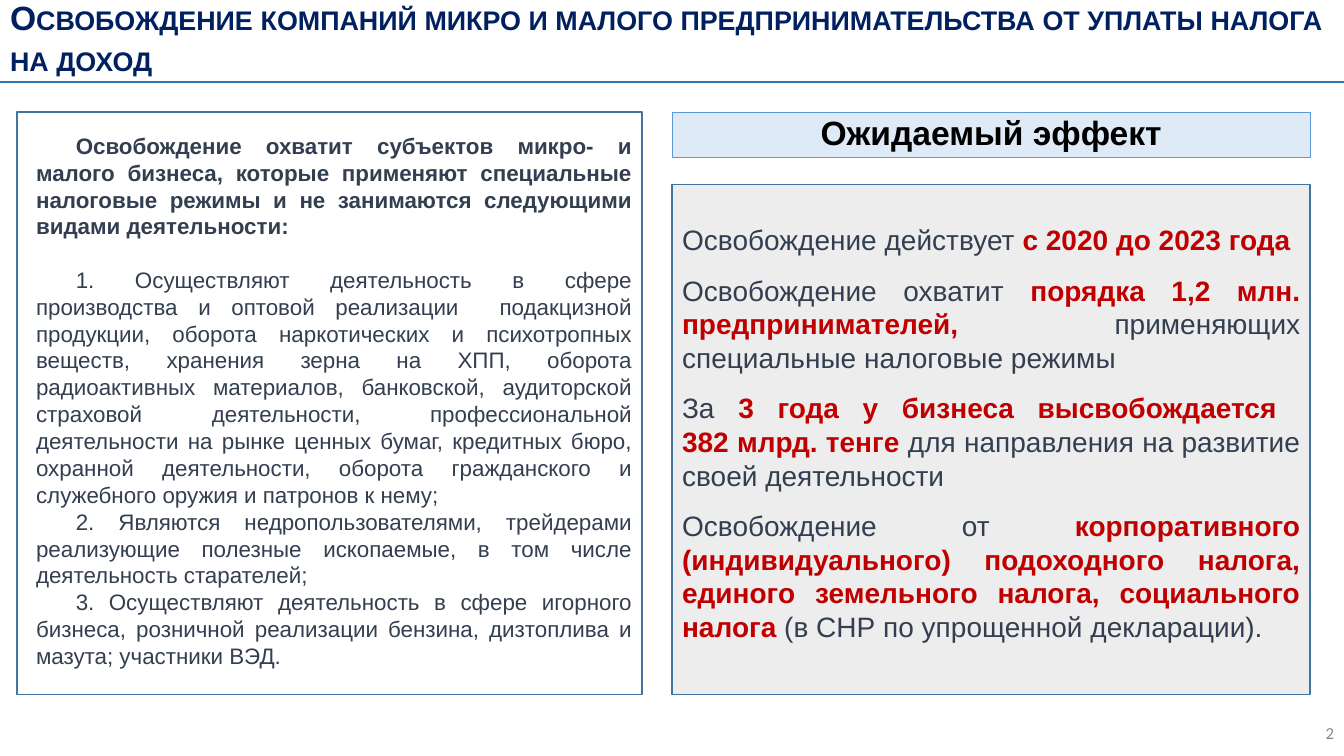
from lxml.etree import SubElement
from pptx import Presentation
from pptx.dml.color import RGBColor
from pptx.enum.shapes import MSO_CONNECTOR, MSO_SHAPE
from pptx.enum.text import MSO_ANCHOR, MSO_AUTO_SIZE, PP_ALIGN
from pptx.oxml.ns import qn
from pptx.util import Cm, Pt

# Content: each paragraph is a list of (text, style name) runs
TITLE = "Освобождение компаний микро и малого предпринимательства от уплаты налога на доход"
EFFECT_HEADING = "Ожидаемый эффект"
PAGE_NUMBER = "2"
CONDITIONS = [
    [("Освобождение охватит субъектов микро- и малого бизнеса, которые применяют специальные "
      "налоговые режимы и не занимаются следующими видами деятельности: ", "lead")],
    [("1. Осуществляют деятельность в сфере производства и оптовой реализации  подакцизной "
      "продукции, оборота наркотических и психотропных веществ, хранения зерна на ХПП, оборота "
      "радиоактивных материалов, банковской, аудиторской страховой деятельности, "
      "профессиональной деятельности на рынке ценных бумаг, кредитных бюро, охранной "
      "деятельности, оборота гражданского и служебного оружия и патронов к нему;", "item")],
    [("2. Являются недропользователями, трейдерами реализующие полезные ископаемые, в том "
      "числе деятельность старателей;", "item")],
    [("3. Осуществляют деятельность в сфере игорного бизнеса, розничной реализации бензина, "
      "дизтоплива и мазута; участники ВЭД.", "item")],
]
EFFECTS = [
    [("Освобождение действует ", "effect"), ("с 2020 до 2023 года", "accent")],
    [("Освобождение охватит ", "effect"),
     ("порядка 1,2 млн. предпринимателей, ", "accent"),
     ("применяющих специальные налоговые режимы", "effect")],
    [("За ", "effect"),
     ("3 года у бизнеса высвобождается \n382 млрд. тенге ", "accent"),
     ("для направления на развитие своей деятельности", "effect")],
    [("Освобождение от ", "effect"),
     ("корпоративного (индивидуального) подоходного налога, единого земельного налога, "
      "социального налога", "accent"),
     (" (в СНР по упрощенной декларации).", "effect")],
]

# Styles: font, size, colour, bold
STYLES = {
    "title": ("Arial", 24, "002060", True),
    "heading": ("Arial", 24, "000000", True),
    "lead": ("Arial", 16, "333F50", True),
    "item": ("Arial", 16, "333F50", False),
    "effect": ("Arial", 20, "333F50", False),
    "accent": ("Arial", 20, "C00000", True),
    "number": ("Calibri", 12, "898989", False),
}

# Layout in centimetres
WIDTH, HEIGHT = 33.87, 19.05
LEFT_X, LEFT_WIDTH = 0.43, 15.75
RIGHT_X, RIGHT_WIDTH = 16.94, 16.08
TOP, BOTTOM = 2.82, 17.5
EFFECT_TOP = 4.65
RULE_Y = 2.06


def color(value):
    return RGBColor.from_string(value)


def set_values(target, values):
    for name, value in values.items():
        setattr(target, name, value)


def write(frame, paragraphs, paragraph_format, **frame_format):
    set_values(frame, {"word_wrap": True, "auto_size": MSO_AUTO_SIZE.NONE, **frame_format})
    for index, runs in enumerate(paragraphs):
        paragraph = frame.add_paragraph() if index else frame.paragraphs[0]
        set_values(paragraph, paragraph_format)
        for text, style in runs:
            name, size, value, bold = STYLES[style]
            for number, line in enumerate(text.split("\n")):
                if number:
                    paragraph.add_line_break()
                run = paragraph.add_run()
                run.text = line
                set_values(run.font, {"name": name, "size": Pt(size), "bold": bold})
                run.font.color.rgb = color(value)


def add_text(slide, box, paragraphs, paragraph_format, **frame_format):
    shape = slide.shapes.add_textbox(*map(Cm, box))
    write(shape.text_frame, paragraphs, paragraph_format, **frame_format)
    return shape


def add_panel(slide, box, fill, line, line_width):
    shape = slide.shapes.add_shape(MSO_SHAPE.RECTANGLE, *map(Cm, box))
    shape.shadow.inherit = False
    shape.fill.solid()
    shape.fill.fore_color.rgb = color(fill)
    shape.line.color.rgb = color(line)
    shape.line.width = Pt(line_width)
    return shape


def main():
    presentation = Presentation()
    set_values(presentation, {"slide_width": Cm(WIDTH), "slide_height": Cm(HEIGHT)})
    slide = presentation.slides.add_slide(presentation.slide_layouts[5])

    # Title in small capitals with a rule below
    title = slide.shapes.title
    set_values(title, {"left": Cm(0), "top": Cm(-0.05), "width": Cm(WIDTH), "height": Cm(2)})
    write(title.text_frame, [[(TITLE, "title")]], {"alignment": PP_ALIGN.LEFT},
          vertical_anchor=MSO_ANCHOR.MIDDLE)
    title.text_frame.paragraphs[0].runs[0].font._element.set("cap", "small")
    rule = slide.shapes.add_connector(MSO_CONNECTOR.STRAIGHT, Cm(0), Cm(RULE_Y), Cm(WIDTH), Cm(RULE_Y))
    rule.line.color.rgb = color("2E75B6")
    rule.line.width = Pt(1.5)
    SubElement(rule._element.spPr, qn("a:effectLst"))

    # Panels
    add_panel(slide, (RIGHT_X, EFFECT_TOP, RIGHT_WIDTH, BOTTOM - EFFECT_TOP), "EDEDED", "43739E", 1)
    add_panel(slide, (LEFT_X, TOP, LEFT_WIDTH, BOTTOM - TOP), "FFFFFF", "43739E", 1)
    heading = add_panel(slide, (RIGHT_X, TOP, RIGHT_WIDTH, 1.14), "DEEBF7", "5B9BD5", 0.5)
    write(heading.text_frame, [[(EFFECT_HEADING, "heading")]], {"alignment": PP_ALIGN.CENTER},
          vertical_anchor=MSO_ANCHOR.TOP, margin_top=0, margin_bottom=0,
          margin_left=Cm(0.13), margin_right=Cm(0.13))

    # Expected effects
    add_text(slide, (RIGHT_X, 5.49, RIGHT_WIDTH, 10.95), EFFECTS,
             {"alignment": PP_ALIGN.JUSTIFY, "space_before": Pt(6), "space_after": Pt(6)})

    # Conditions, with a one-line gap after the lead and indented first lines
    conditions = add_text(slide, (0.66, 3.2, 15.52, 13.94), CONDITIONS,
                          {"alignment": PP_ALIGN.JUSTIFY})
    for paragraph in conditions.text_frame.paragraphs:
        paragraph._p.get_or_add_pPr().set("indent", str(Cm(1)))
    conditions.text_frame.paragraphs[0].space_after = Pt(19)

    # Page number
    add_text(slide, (WIDTH - 7.62, 17.96, 7.62, 1.02), [[(PAGE_NUMBER, "number")]],
             {"alignment": PP_ALIGN.RIGHT}, vertical_anchor=MSO_ANCHOR.MIDDLE)

    presentation.save("out.pptx")


if __name__ == "__main__":
    main()
